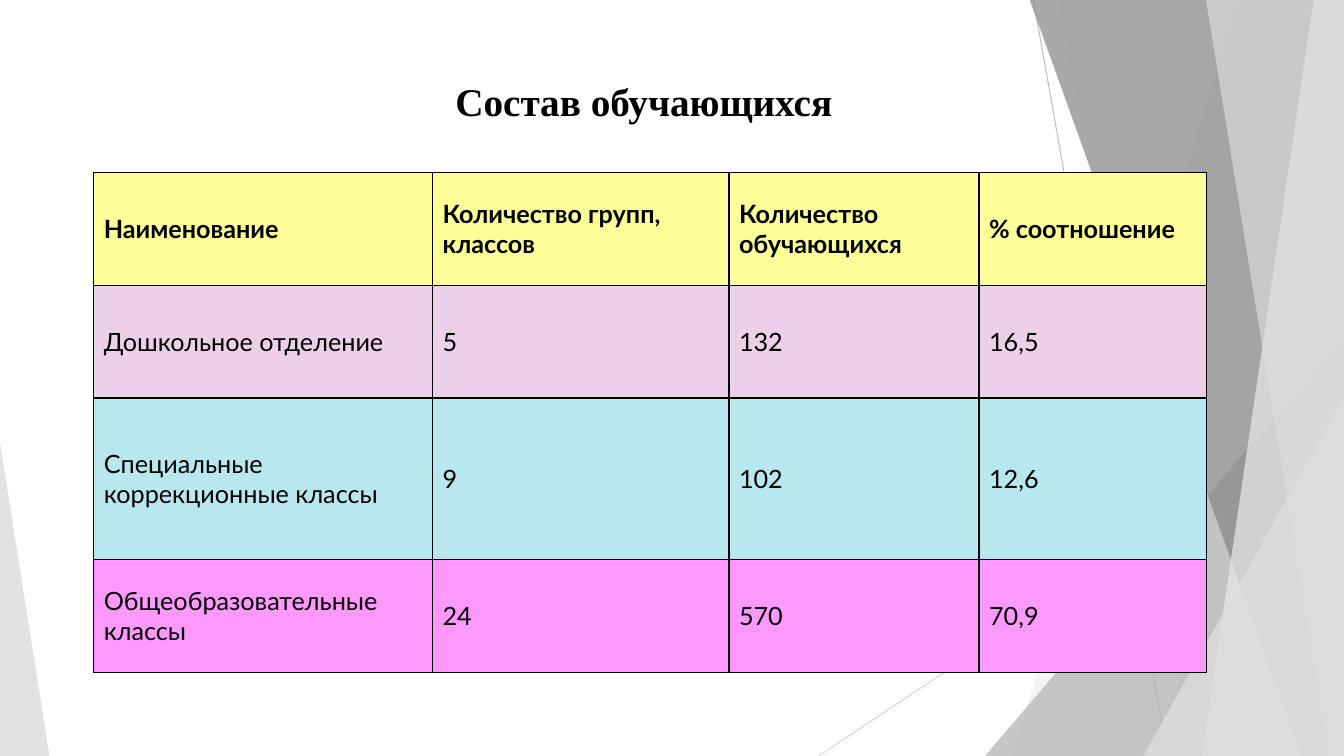
"""Builds a slide with a table of student groups over a faceted grey backdrop."""
from lxml.etree import SubElement
from pptx import Presentation
from pptx.dml.color import RGBColor
from pptx.enum.shapes import MSO_CONNECTOR, MSO_SHAPE
from pptx.enum.text import MSO_ANCHOR, PP_ALIGN
from pptx.oxml.ns import qn
from pptx.util import Inches, Pt

COLORS = {
    "black": "000000",
    "thin_line": "BFBFBF",
    "pale_line": "D9D9D9",
    "light": "DDDDDD",
    "lighter": "EBEBEB",
    "mid": "B2B2B2",
    "dark": "858585",
    "yellow": "FFFF99",
    "lilac": "ECD0EA",
    "aqua": "B8E8EE",
    "pink": "FF99FF",
}
TOP, BOTTOM, RIGHT = -0.01, 7.5, 13.33


class SlidePainter:
    title_font, body_font = "Times New Roman", "Lato"

    def __init__(self, slide):
        self.slide = slide
        self.shapes = slide.shapes

    def color(self, name):
        return RGBColor.from_string(COLORS[name])

    def set_font(self, paragraph, family, size, bold):
        font = paragraph.font
        font.name, font.size, font.bold = family, Pt(size), bold
        font.color.rgb = self.color("black")

    def tint(self, facet, color, opacity):
        facet.shadow.inherit = False
        facet.line.fill.background()
        facet.fill.solid()
        facet.fill.fore_color.rgb = self.color(color)
        rgb = facet.fill._xPr.find(".//" + qn("a:srgbClr"))
        SubElement(rgb, qn("a:alpha"), val=str(opacity * 1000))

    def line(self, start, end, color):
        ray = self.shapes.add_connector(
            MSO_CONNECTOR.STRAIGHT, *map(Inches, start + end))
        ray.line.color.rgb = self.color(color)
        ray.line.width = Pt(0.75)
        SubElement(ray._element.spPr, qn("a:effectLst"))

    def facet(self, top_x, bottom_x, color, opacity):
        points = [(top_x, TOP), (RIGHT, TOP), (RIGHT, BOTTOM), (bottom_x, BOTTOM)]
        corners = [(Inches(x), Inches(y)) for x, y in points]
        builder = self.shapes.build_freeform(*corners[0])
        builder.add_line_segments(corners[1:], close=True)
        self.tint(builder.convert_to_shape(), color, opacity)

    def triangle(self, left, top, width, apex, color, opacity):
        wedge = self.shapes.add_shape(
            MSO_SHAPE.ISOSCELES_TRIANGLE,
            *map(Inches, (left, top, width, BOTTOM - top)))
        wedge.adjustments[0] = apex
        self.tint(wedge, color, opacity)

    def title(self, text, box):
        frame = self.shapes.add_textbox(*map(Inches, box)).text_frame
        frame.word_wrap = True
        frame.vertical_anchor = MSO_ANCHOR.MIDDLE
        heading = frame.paragraphs[0]
        heading.text = text
        heading.alignment = PP_ALIGN.CENTER
        self.set_font(heading, self.title_font, 28, True)

    def cell(self, cell, text, color, bold):
        cell.text = text
        cell.vertical_anchor = MSO_ANCHOR.MIDDLE
        self.set_font(cell.text_frame.paragraphs[0], self.body_font, 18, bold)
        properties = cell._tc.get_or_add_tcPr()
        for side in ("lnL", "lnR", "lnT", "lnB"):
            border = SubElement(properties, qn("a:" + side), w=str(Pt(1)))
            fill = SubElement(border, qn("a:solidFill"))
            SubElement(fill, qn("a:srgbClr"), val=COLORS["black"])
        cell.fill.solid()
        cell.fill.fore_color.rgb = self.color(color)

    def table(self, left, top, widths, heights, rows):
        table = self.shapes.add_table(
            len(heights), len(widths),
            *map(Inches, (left, top, sum(widths), sum(heights)))).table
        table.horz_banding = False
        for column, width in zip(table.columns, widths):
            column.width = Inches(width)
        for r, (height, (color, values)) in enumerate(zip(heights, rows)):
            table.rows[r].height = Inches(height)
            for c, value in enumerate(values):
                self.cell(table.cell(r, c), value, color, bold=r == 0)


def main():
    deck = Presentation()
    deck.slide_width, deck.slide_height = Inches(RIGHT), Inches(BOTTOM)
    painter = SlidePainter(deck.slides.add_slide(deck.slide_layouts[6]))

    painter.line((10.25, 0), (11.58, BOTTOM), "thin_line")
    painter.line((RIGHT, 4.03), (8.12, BOTTOM), "pale_line")
    painter.facet(12.28, 10.04, "light", 30)
    painter.facet(10.5, 11.83, "light", 20)
    painter.triangle(9.77, 3.33, 3.56, 1, "mid", 72)
    painter.facet(10.21, 12.91, "dark", 70)
    painter.facet(13.03, 11.92, "lighter", 70)
    painter.facet(11.96, 13.18, "light", 65)
    painter.triangle(11.34, 3.93, 1.99, 1, "light", 80)
    painter.triangle(0, 4.39, 0.49, 0, "light", 85)

    painter.title("Состав обучающихся", (0.74, 0.67, 11.29, 0.66))
    painter.table(0.93, 1.71, (3.36, 2.94, 2.48, 2.26), (1.12, 1.12, 1.6, 1.12), [
        ("yellow", ("Наименование", "Количество групп, классов",
                    "Количество обучающихся", "% соотношение")),
        ("lilac", ("Дошкольное отделение", "5", "132", "16,5")),
        ("aqua", ("Специальные коррекционные классы", "9", "102", "12,6")),
        ("pink", ("Общеобразовательные классы", "24", "570", "70,9")),
    ])
    deck.save("out.pptx")


if __name__ == "__main__":
    main()
